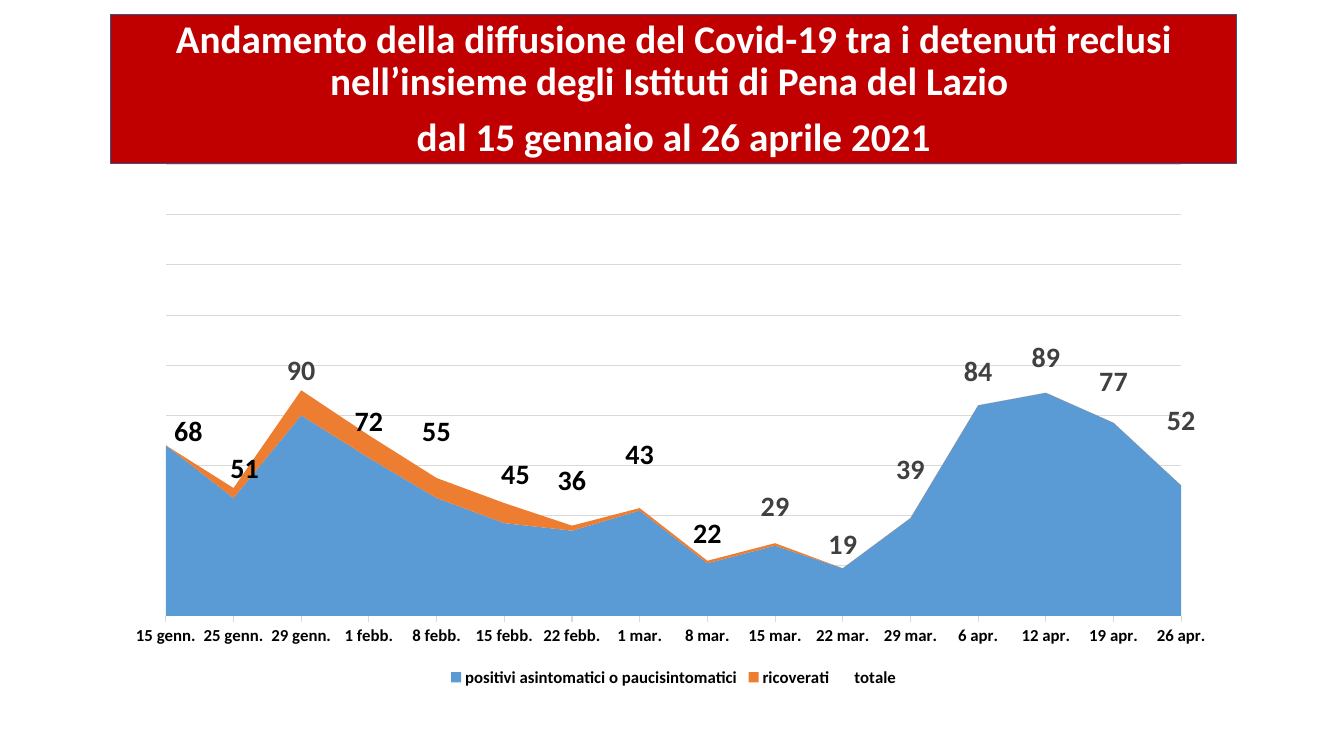
from lxml import etree
from pptx import Presentation
from pptx.chart.data import CategoryChartData
from pptx.dml.color import RGBColor
from pptx.enum.chart import XL_CHART_TYPE as ChartType, XL_LEGEND_POSITION as LegendPosition
from pptx.enum.chart import XL_TICK_MARK as TickMark
from pptx.enum.text import MSO_ANCHOR as Anchor, MSO_AUTO_SIZE as AutoSize, PP_ALIGN as Align
from pptx.oxml import parse_xml
from pptx.oxml.ns import nsdecls, qn
from pptx.util import Cm, Pt

RED = RGBColor(0xC0, 0x00, 0x00)
NAVY = RGBColor(0x32, 0x54, 0x91)
WHITE = RGBColor(0xFF, 0xFF, 0xFF)
BLACK = RGBColor(0x00, 0x00, 0x00)
DARK_GREY = RGBColor(0x40, 0x40, 0x40)
LIGHT_GREY = RGBColor(0xD9, 0xD9, 0xD9)
BLUE = RGBColor(0x5B, 0x9B, 0xD5)
ORANGE = RGBColor(0xED, 0x7D, 0x31)
FONT = "Calibri"

TITLE_LINES = [
    "Andamento della diffusione del Covid-19 tra i detenuti reclusi "
    "nell’insieme degli Istituti di Pena del Lazio ",
    "dal 15 gennaio al 26 aprile 2021",
]
DATES = [
    "15 genn.", "25 genn.", "29 genn.", "1 febb.", "8 febb.", "15 febb.", "22 febb.", "1 mar.",
    "8 mar.", "15 mar.", "22 mar.", "29 mar.", "6 apr.", "12 apr.", "19 apr.", "26 apr.",
]
POSITIVE = [68, 47, 80, 63, 47, 37, 34, 42, 21, 28, 19, 39, 84, 89, 77, 52]
HOSPITALISED = [0, 4, 10, 9, 8, 8, 2, 1, 1, 1, 0, 0, None, None, None, None]
TOTAL = [positive + (ill or 0) for positive, ill in zip(POSITIVE, HOSPITALISED)]
SERIES = [
    ("positivi asintomatici o paucisintomatici", POSITIVE, BLUE),
    ("ricoverati", HOSPITALISED, ORANGE),
    ("totale", TOTAL, None),
]
LABEL_SHIFTS = {
    0: (0.02, 0.13, BLACK), 1: (0.01, 0.08, BLACK), 2: (0, 0.17, DARK_GREY),
    3: (0, 0.14, BLACK), 4: (0, 0.04, BLACK), 5: (0.01, 0.05, BLACK),
    6: (0, 0, BLACK), 7: (0, 0, BLACK), 8: (0, 0, BLACK),
    12: (0, 0.13, DARK_GREY), 13: (0, 0.14, DARK_GREY), 14: (0, 0.1, DARK_GREY),
}


def format_font(font, size, color, bold=True):
    """Apply the slide's typeface with a size, colour and weight."""
    font.name = FONT
    font.size = Pt(size)
    font.bold = bold
    font.color.rgb = color


def write_paragraph(paragraph, text, size=28, color=WHITE, bold=True):
    """Write one centred paragraph."""
    paragraph.alignment = Align.CENTER
    paragraph.line_spacing = 0.9
    paragraph.space_before = Pt(10)
    run = paragraph.add_run()
    run.text = text
    format_font(run.font, size, color, bold)


def make_layout(**values):
    """Return a manual chart layout with the given elements."""
    layout = parse_xml(f"<c:layout {nsdecls('c')}><c:manualLayout/></c:layout>")
    for name, value in values.items():
        etree.SubElement(layout[0], qn(f"c:{name}")).set("val", str(value))
    return layout


def add_banner(slide, left, top, width, height):
    """Turn the title placeholder into the red banner."""
    title = slide.shapes.title
    title.left, title.top, title.width, title.height = left, top, width, height
    title.fill.solid()
    title.fill.fore_color.rgb = RED
    title.line.color.rgb = NAVY
    title.line.width = Pt(1)
    frame = title.text_frame
    frame.word_wrap = True
    frame.auto_size = AutoSize.NONE
    frame.vertical_anchor = Anchor.TOP
    for index, text in enumerate(TITLE_LINES):
        paragraph = frame.add_paragraph() if index else frame.paragraphs[0]
        write_paragraph(paragraph, text)


def format_axes(chart):
    """Style the date axis, the hidden value axis and its gridlines."""
    dates = chart.category_axis
    dates.major_tick_mark = TickMark.OUTSIDE
    dates.has_major_gridlines = False
    format_font(dates.tick_labels.font, 12, BLACK)
    values = chart.value_axis
    values.visible = False
    values.minimum_scale, values.maximum_scale, values.major_unit = 0, 180, 20
    values.has_major_gridlines = True
    for line in (dates.format.line, values.major_gridlines.format.line):
        line.color.rgb = LIGHT_GREY
        line.width = Pt(0.75)


def label_totals(series):
    """Show the totals without leader lines and shift the labels that need it."""
    labels = series.data_labels
    labels.show_value = True
    format_font(labels.font, 20, DARK_GREY)
    for index, (_, _, color) in LABEL_SHIFTS.items():
        format_font(series.points[index].data_label.font, 20, color)
    for label in series._element.iter(qn("c:dLbl")):
        shift_x, shift_y, _ = LABEL_SHIFTS[int(label.find(qn("c:idx")).get("val"))]
        label.insert(1, make_layout(x=shift_x, y=shift_y))
    for leader_lines in series._element.iter(qn("c:showLeaderLines")):
        leader_lines.set("val", "0")


def add_trend_chart(slide, left, top, width, height):
    """Add the stacked area chart of cases by date."""
    data = CategoryChartData()
    data.categories = DATES
    for name, values, _ in SERIES:
        data.add_series(name, values)
    frame = slide.shapes.add_chart(ChartType.AREA_STACKED, left, top, width, height, data)
    chart = frame.chart
    chart.has_title = False
    format_font(chart.font, 10, BLACK, bold=False)
    chart.has_legend = True
    chart.legend.position = LegendPosition.BOTTOM
    chart.legend.include_in_layout = False
    format_font(chart.legend.font, 12, BLACK)
    format_axes(chart)

    plot = chart.plots[0]
    plot.vary_by_categories = False
    for series, (_, _, color) in zip(plot.series, SERIES):
        series.format.line.fill.background()
        if color is None:
            series.format.fill.background()
            label_totals(series)
        else:
            series.format.fill.solid()
            series.format.fill.fore_color.rgb = color

    chart_body = chart._chartSpace.find(qn("c:chart"))
    chart_body.addnext(parse_xml(
        f"<c:spPr {nsdecls('c', 'a')}><a:noFill/><a:ln><a:noFill/></a:ln></c:spPr>"))
    plot_area = chart_body.find(qn("c:plotArea"))
    for layout in plot_area.findall(qn("c:layout")):
        plot_area.remove(layout)
    plot_area.insert(0, make_layout(
        layoutTarget="inner", xMode="edge", yMode="edge", x=0.049, y=0.041, w=0.902, h=0.822))


def main():
    """Build and save the slide."""
    presentation = Presentation()
    presentation.slide_width, presentation.slide_height = Cm(33.87), Cm(19.05)
    slide = presentation.slides.add_slide(presentation.slide_layouts[5])
    left, width = Cm(2.79), Cm(28.37)
    add_banner(slide, left, Cm(0.36), width, Cm(3.76))
    add_trend_chart(slide, left, Cm(3.58), width, Cm(13.84))
    presentation.save("out.pptx")


if __name__ == "__main__":
    main()
